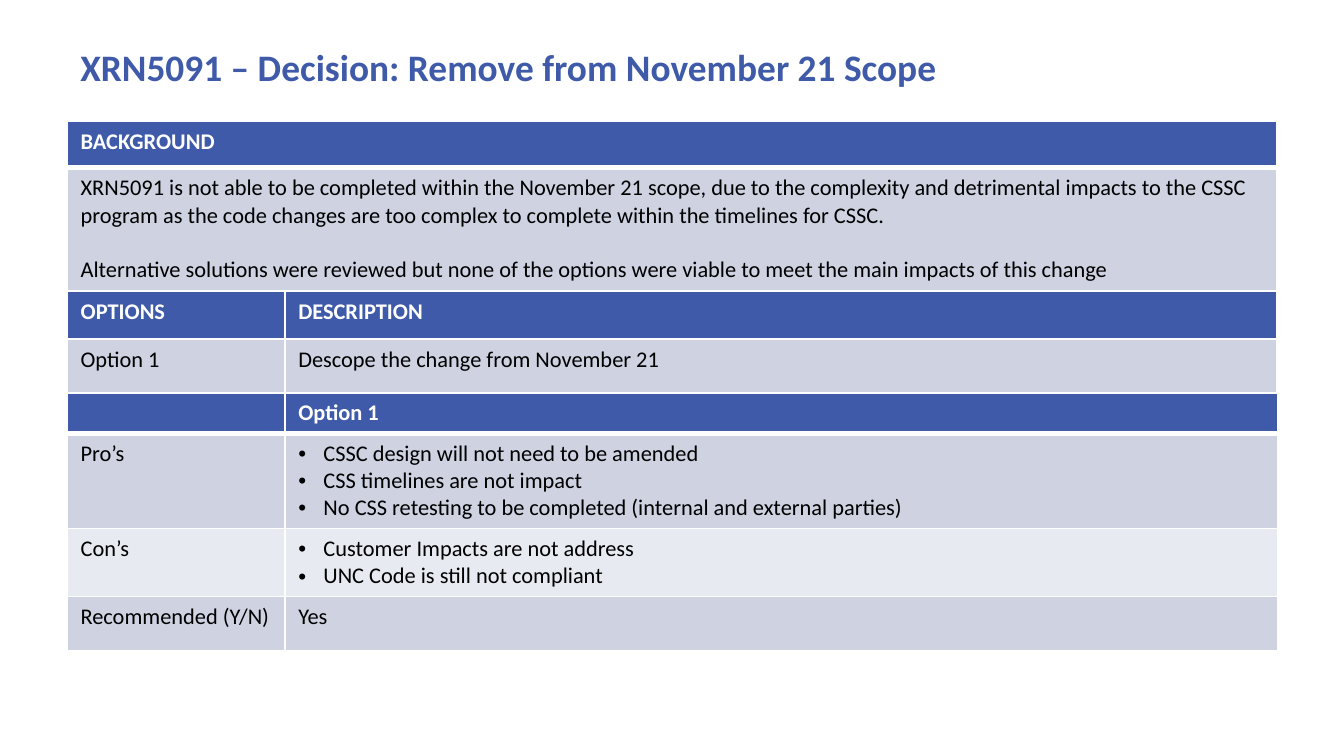
from dataclasses import dataclass

from lxml import etree
from pptx import Presentation
from pptx.dml.color import RGBColor
from pptx.enum.text import MSO_ANCHOR
from pptx.oxml.ns import qn
from pptx.util import Pt

MIDDLE = MSO_ANCHOR.MIDDLE


@dataclass(frozen=True)
class Theme:
    font: str = "Calibri"
    title_size: float = 20
    body_size: float = 12
    blue: str = "3E5AA8"
    band: str = "CED2E1"
    pale: str = "E8EAF1"
    white: str = "FFFFFF"
    black: str = "000000"
    thin: float = 1
    thick: float = 3


THEME = Theme()
LEFT = 36
OPTION_COLUMN = 116.6


def set_font(paragraph, size, color, bold):
    font = paragraph.font
    font.name = THEME.font
    font.size = Pt(size)
    font.bold = bold
    font.color.rgb = RGBColor.from_string(color)


def add_bullet(paragraph):
    properties = paragraph._p.get_or_add_pPr()
    properties.set("marL", str(Pt(13.5)))
    properties.set("indent", str(-Pt(13.5)))
    etree.SubElement(properties, qn("a:buFont"), typeface="Arial")
    etree.SubElement(properties, qn("a:buChar"), char="•")


def add_borders(cell, top, bottom):
    properties = cell._tc.get_or_add_tcPr()
    widths = {"L": THEME.thin, "R": THEME.thin, "T": top, "B": bottom}
    for side, width in widths.items():
        line = etree.SubElement(properties, qn(f"a:ln{side}"), w=str(Pt(width)))
        fill = etree.SubElement(line, qn("a:solidFill"))
        etree.SubElement(fill, qn("a:srgbClr"), val=THEME.white)


def fill_cell(cell, lines, fill, bulleted=False, gap=0):
    header = fill == THEME.blue
    cell.fill.solid()
    cell.fill.fore_color.rgb = RGBColor.from_string(fill)
    frame = cell.text_frame
    for index, line in enumerate(lines):
        paragraph = frame.add_paragraph() if index else frame.paragraphs[0]
        paragraph.text = line
        if index and gap:
            paragraph.space_before = Pt(gap)
        if bulleted:
            add_bullet(paragraph)
        set_font(paragraph, THEME.body_size,
                 THEME.white if header else THEME.black, header)


def add_grid(slide, top, widths, heights):
    """Add a table whose first row is ruled off by a thick line."""
    table = slide.shapes.add_table(
        len(heights), len(widths), Pt(LEFT), Pt(top),
        Pt(sum(widths)), Pt(sum(heights))).table
    for column, width in zip(table.columns, widths):
        column.width = Pt(width)
    for index, (row, height) in enumerate(zip(table.rows, heights)):
        row.height = Pt(height)
        for cell in row.cells:
            add_borders(cell,
                        THEME.thick if index == 1 else THEME.thin,
                        THEME.thick if index == 0 else THEME.thin)
    return table


def add_title(slide, text):
    frame = slide.shapes.add_textbox(Pt(LEFT), Pt(10.2), Pt(648), Pt(50.4)).text_frame
    frame.word_wrap = True
    frame.vertical_anchor = MIDDLE
    frame.text = text
    set_font(frame.paragraphs[0], THEME.title_size, THEME.blue, True)


def add_background_table(slide):
    table = add_grid(slide, 65, [OPTION_COLUMN, 531.4], [25, 66, 25.8, 28.6])
    for row in range(2):
        table.cell(row, 0).merge(table.cell(row, 1))

    # Background across both columns
    fill_cell(table.cell(0, 0), ["BACKGROUND"], THEME.blue)
    fill_cell(table.cell(1, 0), [
        "XRN5091 is not able to be completed within the November 21 scope, due to "
        "the complexity and detrimental impacts to the CSSC program as the code "
        "changes are too complex to complete within the timelines for CSSC.",
        "Alternative solutions were reviewed but none of the options were viable "
        "to meet the main impacts of this change",
    ], THEME.band, gap=14.6)

    # Options and their descriptions
    options = [
        ("OPTIONS", "DESCRIPTION", THEME.blue),
        ("Option 1", "Descope the change from November 21", THEME.band),
    ]
    for row, (option, description, fill) in enumerate(options, start=2):
        fill_cell(table.cell(row, 0), [option], fill)
        fill_cell(table.cell(row, 1), [description], fill)


def add_assessment_table(slide):
    table = add_grid(slide, 210.4, [OPTION_COLUMN, 532], [21.6, 51.2, 36.4, 29])
    assessment = [
        ("", ["Option 1"], THEME.blue),
        ("Pro’s", [
            "CSSC design will not need to be amended",
            "CSS timelines are not impact",
            "No CSS retesting to be completed (internal and external parties)",
        ], THEME.band),
        ("Con’s", [
            "Customer Impacts are not address",
            "UNC Code is still not compliant",
        ], THEME.pale),
        ("Recommended (Y/N)", ["Yes"], THEME.band),
    ]
    for row, (label, points, fill) in enumerate(assessment):
        fill_cell(table.cell(row, 0), [label], fill)
        fill_cell(table.cell(row, 1), points, fill, bulleted=len(points) > 1)


def main():
    deck = Presentation()
    deck.slide_width, deck.slide_height = Pt(720), Pt(405)
    slide = deck.slides.add_slide(deck.slide_layouts[6])
    add_title(slide, "XRN5091 – Decision: Remove from November 21 Scope")
    add_background_table(slide)
    add_assessment_table(slide)
    deck.save("out.pptx")


if __name__ == "__main__":
    main()
